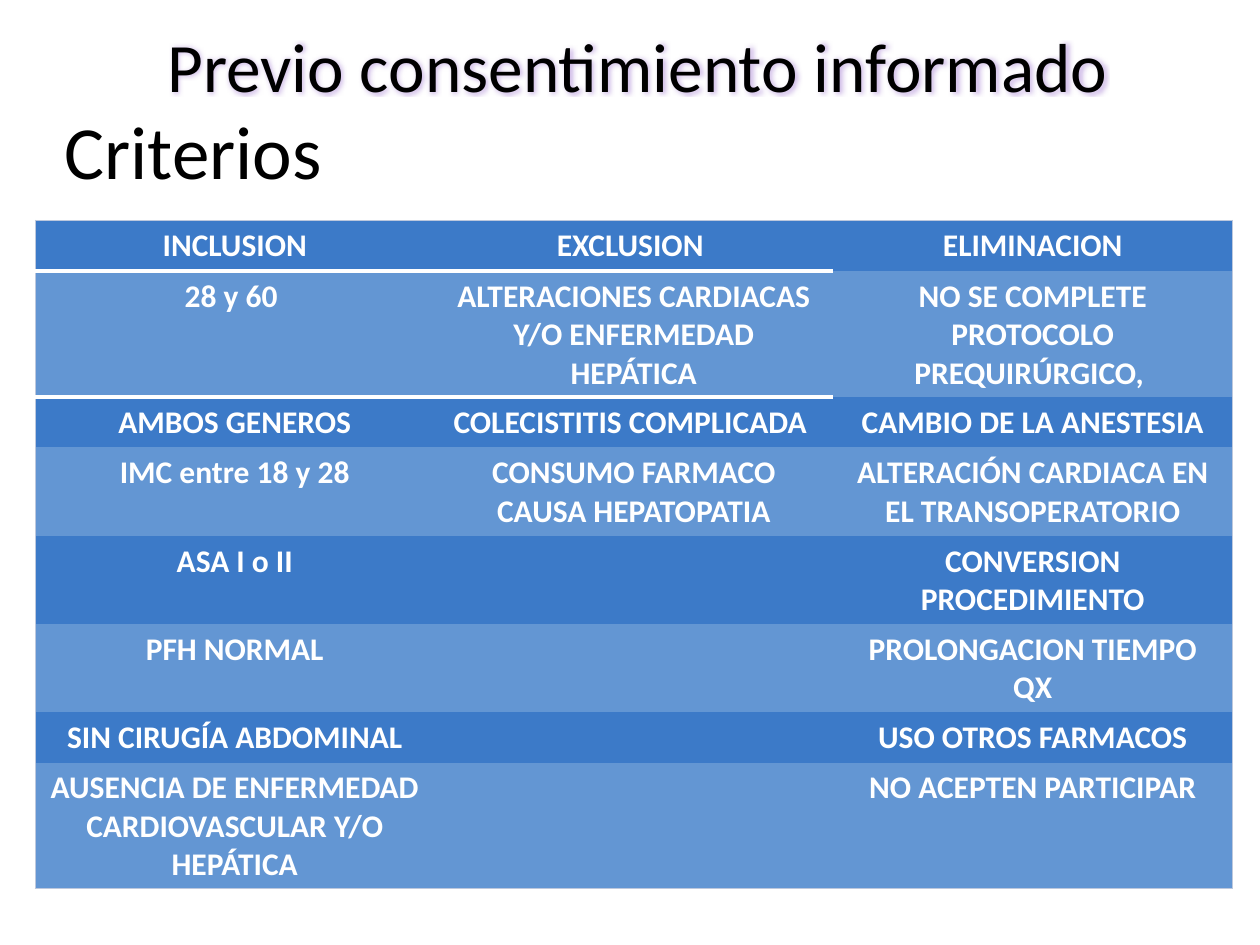
from lxml.etree import SubElement
from pptx import Presentation
from pptx.dml.color import RGBColor
from pptx.enum.text import MSO_ANCHOR, PP_ALIGN
from pptx.oxml.ns import qn
from pptx.util import Inches, Pt

FONT = "Calibri"
BLACK, WHITE, EDGE = "000000", "FFFFFF", "BDC8DD"
BANDS = ("3C7AC8", "6396D3")
GLOW = "8F5FC8"
NO_STYLE = "{2D5ABB26-0587-4C30-8999-92F81FD0307C}"

# text, left, top, width, height, size, alignment, line spacing
HEADINGS = {
    "title": (" Previo consentimiento informado",
              0.5, 0.13, 9, 0.77, 39.6, PP_ALIGN.CENTER, 1),
    "criteria": (" Criterios", 0.28, 0.85, 2.52, 0.77, 42.9, PP_ALIGN.LEFT, 0.9),
}

# lines of text in the row, then its three cells
ROWS = [
    (1, "INCLUSION", "EXCLUSION ", "ELIMINACION"),
    (3, "28 y 60 ", "ALTERACIONES CARDIACAS Y/O ENFERMEDAD HEPÁTICA",
     "NO SE COMPLETE PROTOCOLO PREQUIRÚRGICO, "),
    (1, "AMBOS GENEROS", "COLECISTITIS COMPLICADA ", "CAMBIO DE LA ANESTESIA"),
    (2, "IMC entre 18 y 28", "CONSUMO FARMACO CAUSA HEPATOPATIA",
     "ALTERACIÓN CARDIACA EN EL TRANSOPERATORIO"),
    (2, "ASA I o II", "", "CONVERSION PROCEDIMIENTO"),
    (2, "PFH NORMAL", "", "PROLONGACION TIEMPO QX"),
    (1, "SIN CIRUGÍA ABDOMINAL", "", "USO OTROS FARMACOS"),
    (3, "AUSENCIA DE ENFERMEDAD CARDIOVASCULAR Y/O HEPÁTICA", "",
     "NO ACEPTEN PARTICIPAR"),
]
LEFT, TOP, WIDTH = 0.28, 1.75, 9.5
LINE, PADDING = 0.3, 0.1


def rgb(color):
    return RGBColor.from_string(color)


def style(p, size, color, align, bold=False):
    p.alignment = align
    for font in [p.font] + [r.font for r in p.runs]:
        font.name, font.size, font.bold = FONT, Pt(size), bold
        font.color.rgb = rgb(color)


def add_heading(slide, text, x, y, w, h, size, align, spacing):
    sp = slide.shapes.add_textbox(Inches(x), Inches(y), Inches(w), Inches(h))
    tf = sp.text_frame
    tf.word_wrap = True
    tf.vertical_anchor = MSO_ANCHOR.MIDDLE
    tf.text = text
    p = tf.paragraphs[0]
    p.line_spacing = spacing
    style(p, size, BLACK, align)
    return p.runs[0]


def add_glow(r, color, radius, opacity):
    r_pr = r.font._element
    effects = SubElement(r_pr, qn("a:effectLst"))
    r_pr.find(qn("a:solidFill")).addnext(effects)
    glow = SubElement(effects, qn("a:glow"), rad=str(Pt(radius)))
    clr = SubElement(glow, qn("a:srgbClr"), val=color)
    SubElement(clr, qn("a:alpha"), val=str(opacity * 1000))


def set_borders(cell, borders):
    """Borders come as (side, color, width) in the order L, R, T, B."""
    tc_pr = cell._tc.get_or_add_tcPr()
    for i, (side, color, width) in enumerate(borders):
        ln = SubElement(tc_pr, qn("a:ln" + side), w=str(Pt(width)))
        fill = SubElement(ln, qn("a:solidFill"))
        SubElement(fill, qn("a:srgbClr"), val=color)
        tc_pr.insert(i, ln)


def cell_borders(i, j, last_row, last_col):
    edges = (("L", j == 0), ("R", j == last_col), ("T", i == 0), ("B", i == last_row))
    borders = [(side, EDGE, 0.75) for side, outer in edges if outer]
    if i == 0 and j < last_col:
        borders.append(("B", WHITE, 3))
    if i == 1 and j < last_col:
        borders.insert(1 if j == 0 else 0, ("T", WHITE, 3))
    return borders


def add_criteria_table(slide):
    n_rows, n_cols = len(ROWS), len(ROWS[0]) - 1
    heights = [PADDING + LINE * row[0] for row in ROWS]
    frame = slide.shapes.add_table(n_rows, n_cols, Inches(LEFT), Inches(TOP),
                                   Inches(WIDTH), Inches(sum(heights)))
    table = frame.table
    table._tbl.tblPr.find(qn("a:tableStyleId")).text = NO_STYLE
    for col in table.columns:
        col.width = Inches(WIDTH / n_cols)
    for i, (_, *texts) in enumerate(ROWS):
        table.rows[i].height = Inches(heights[i])
        for j, text in enumerate(texts):
            cell = table.cell(i, j)
            cell.text = text
            style(cell.text_frame.paragraphs[0], 18, WHITE, PP_ALIGN.CENTER, True)
            cell.fill.solid()
            cell.fill.fore_color.rgb = rgb(BANDS[i % 2])
            set_borders(cell, cell_borders(i, j, n_rows - 1, n_cols - 1))


def main():
    prs = Presentation()
    prs.slide_width, prs.slide_height = Inches(10), Inches(7.5)
    slide = prs.slides.add_slide(prs.slide_layouts[6])

    # Headings, the title with a purple glow
    title = add_heading(slide, *HEADINGS["title"])
    add_glow(title, GLOW, 5, 40)
    add_heading(slide, *HEADINGS["criteria"])

    # Criteria in three columns
    add_criteria_table(slide)
    prs.save("out.pptx")


if __name__ == "__main__":
    main()
